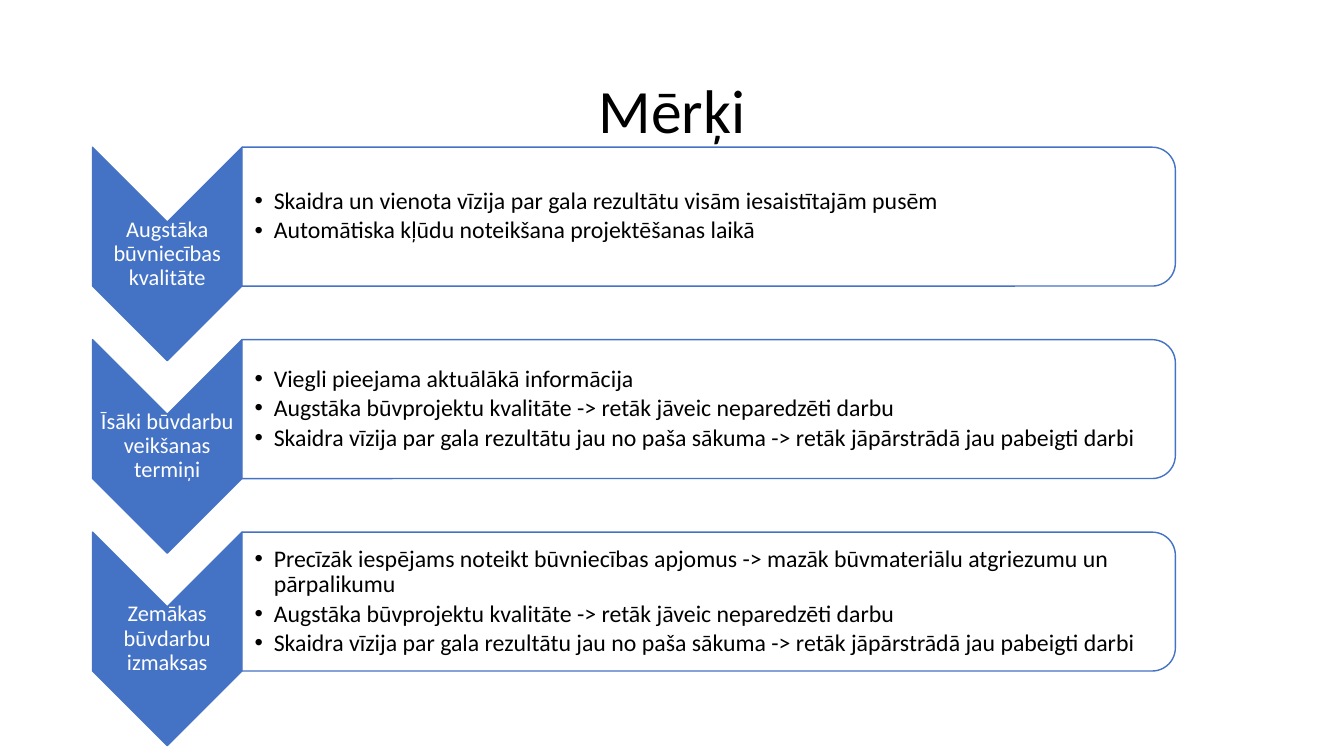
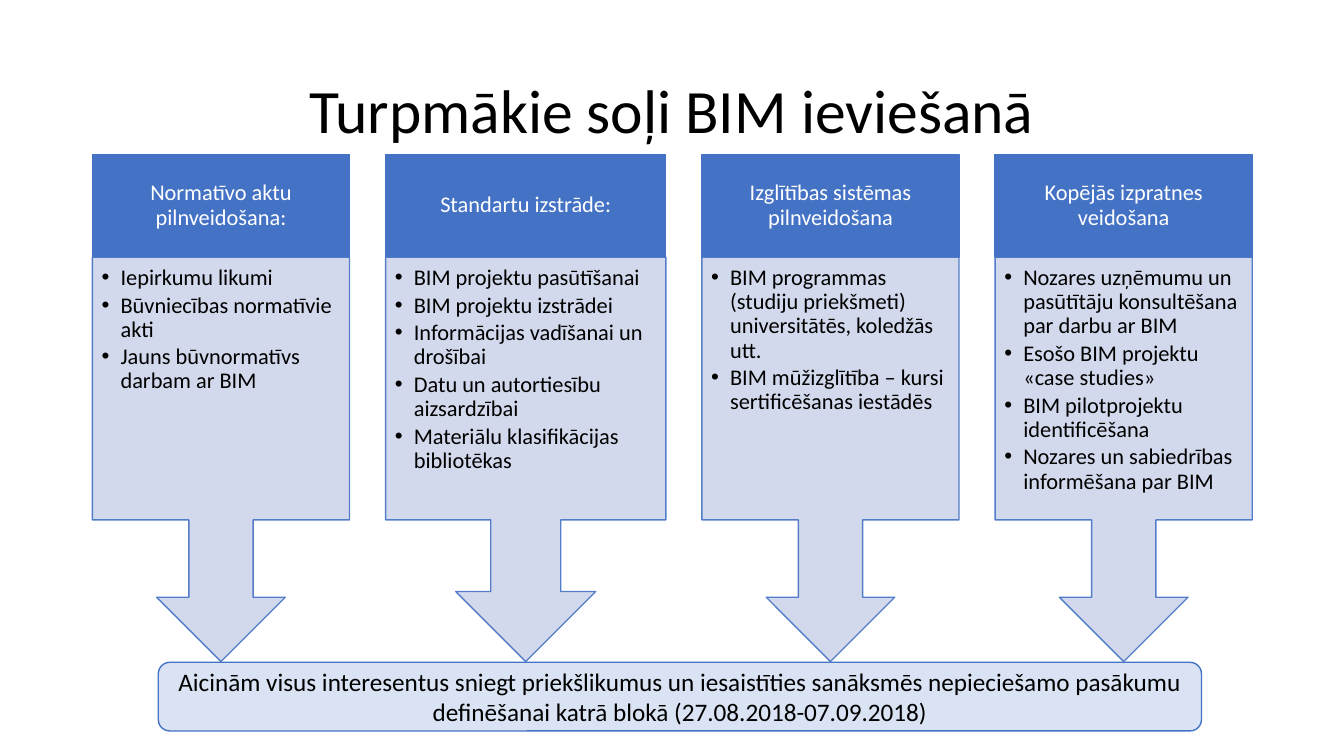
import dataclasses

import lxml.etree
import pptx
import pptx.dml.color
import pptx.enum.shapes
import pptx.enum.text
import pptx.oxml.ns
import pptx.util

Cm = pptx.util.Cm
Pt = pptx.util.Pt
Preset = pptx.enum.shapes.MSO_SHAPE
Align = pptx.enum.text.PP_ALIGN
Anchor = pptx.enum.text.MSO_ANCHOR
qn = pptx.oxml.ns.qn


@dataclasses.dataclass(frozen=True)
class Theme:
    font: str = "Calibri"
    accent: str = "4472C4"
    tint: str = "CFD5EA"
    pale: str = "DAE3F3"
    white: str = "FFFFFF"
    black: str = "000000"
    title_size: int = 44
    note_size: int = 18
    goal_size: int = 17
    label_size: int = 16
    line_width: int = 1
    opacity: int = 90
    bullet_indent: float = 0.48
    tight: float = 0.9
    label_gap: float = 0.35  # space after, as a share of the type size
    list_gap: float = 0.15


THEME = Theme()
FILL = ("a:solidFill", "a:srgbClr")
OUTLINE = ("a:ln", "a:solidFill", "a:srgbClr")

GOALS = [
    ("Augstāka būvniecības kvalitāte",
     ["Skaidra un vienota vīzija par gala rezultātu visām iesaistītajām pusēm",
      "Automātiska kļūdu noteikšana projektēšanas laikā"]),
    ("Īsāki būvdarbu veikšanas termiņi",
     ["Viegli pieejama aktuālākā informācija",
      "Augstāka būvprojektu kvalitāte -> retāk jāveic neparedzēti darbu",
      "Skaidra vīzija par gala rezultātu jau no paša sākuma -> retāk jāpārstrādā jau pabeigti darbi"]),
    ("Zemākas būvdarbu izmaksas",
     ["Precīzāk iespējams noteikt būvniecības apjomus -> mazāk būvmateriālu atgriezumu un pārpalikumu",
      "Augstāka būvprojektu kvalitāte -> retāk jāveic neparedzēti darbu",
      "Skaidra vīzija par gala rezultātu jau no paša sākuma -> retāk jāpārstrādā jau pabeigti darbi"]),
]

# Column width in cm, heading, list
STEPS = [
    (6.48, "Normatīvo aktu pilnveidošana:",
     ["Iepirkumu likumi",
      "Būvniecības normatīvie akti",
      "Jauns būvnormatīvs darbam ar BIM"]),
    (7.06, "Standartu izstrāde:",
     ["BIM projektu pasūtīšanai",
      "BIM projektu izstrādei",
      "Informācijas vadīšanai un drošībai",
      "Datu un autortiesību aizsardzībai",
      "Materiālu klasifikācijas bibliotēkas"]),
    (6.48, "Izglītības sistēmas pilnveidošana",
     ["BIM programmas (studiju priekšmeti) universitātēs, koledžās utt.",
      "BIM mūžizglītība – kursi sertificēšanas iestādēs"]),
    (6.48, "Kopējās izpratnes veidošana",
     ["Nozares uzņēmumu un pasūtītāju konsultēšana par darbu ar BIM",
      "Esošo BIM projektu «case studies»",
      "BIM pilotprojektu identificēšana",
      "Nozares un sabiedrības informēšana par BIM"]),
]

CALL = ("Aicinām visus interesentus sniegt priekšlikumus un iesaistīties sanāksmēs nepieciešamo "
        "pasākumu definēšanai katrā blokā (27.08.2018-07.09.2018)")


def add_bullet(para):
    properties = para._p.get_or_add_pPr()
    indent = Cm(THEME.bullet_indent)
    properties.set("marL", str(int(indent)))
    properties.set("indent", str(-int(indent)))
    lxml.etree.SubElement(properties, qn("a:buFont"), typeface="Arial")
    lxml.etree.SubElement(properties, qn("a:buChar"), char="•")


def write(box, lines, *, size, color=THEME.black, align=Align.CENTER, anchor=Anchor.MIDDLE,
          spacing=THEME.tight, gap=0, bullets=False, insets=None):
    """Fill a box with paragraphs; insets are left, top, right, bottom in cm."""
    frame = box.text_frame
    frame.word_wrap = True
    frame.auto_size = pptx.enum.text.MSO_AUTO_SIZE.NONE
    frame.vertical_anchor = anchor
    if insets:
        (frame.margin_left, frame.margin_top,
         frame.margin_right, frame.margin_bottom) = map(Cm, insets)
    for index, line in enumerate(lines):
        para = frame.add_paragraph() if index else frame.paragraphs[0]
        if bullets:
            add_bullet(para)
        para.alignment = align
        para.line_spacing = spacing
        para.space_before = Pt(0)
        para.space_after = Pt(round(size * gap, 1))
        span = para.add_run()
        span.text = line
        span.font.name = THEME.font
        span.font.size = Pt(size)
        span.font.color.rgb = pptx.dml.color.RGBColor.from_string(color)


def write_list(box, lines, **options):
    write(box, lines, align=Align.LEFT, gap=THEME.list_gap, bullets=True, **options)


def add_text_box(page, left, top, width, height):
    return page.shapes.add_textbox(Cm(left), Cm(top), Cm(width), Cm(height))


def add_box(page, preset, left, top, width, height, *, fill, faded=(), turned=False):
    """Add an outlined shape; a turned one is rotated to fill the given box."""
    if turned:
        left, top = left + (width - height) / 2, top + (height - width) / 2
        width, height = height, width
    box = page.shapes.add_shape(preset, Cm(left), Cm(top), Cm(width), Cm(height))
    box.rotation = 90 if turned else 0
    box.shadow.inherit = False
    box.fill.solid()
    box.fill.fore_color.rgb = pptx.dml.color.RGBColor.from_string(fill)
    box.line.color.rgb = pptx.dml.color.RGBColor.from_string(THEME.accent)
    box.line.width = Pt(THEME.line_width)
    for tags in faded:
        paint = box._element.spPr.find("/".join(map(qn, tags)))
        lxml.etree.SubElement(paint, qn("a:alpha"), val=str(THEME.opacity * 1000))
    return box


def add_page(deck, title):
    page = deck.slides.add_slide(deck.slide_layouts[5])
    box = page.shapes.title
    box.left, box.top, box.width, box.height = map(Cm, (2.33, 1.01, 29.21, 3.68))
    write(box, [title], size=THEME.title_size)
    return page


def add_goal(page, label, lines, left, top):
    """A downward chevron with its label, and a panel with a list beside it."""
    arrow_width, arrow_height = 3.77, 5.38
    panel_left, panel_width, panel_height = left + arrow_width, 23.52, 3.5
    inset, edge = 0.18, 0.03

    # Chevron and label
    add_box(page, Preset.CHEVRON, left, top, arrow_width, arrow_height,
            fill=THEME.accent, turned=True)
    notch = arrow_width / 2
    label_box = add_text_box(page, left, top + notch, arrow_width, arrow_height - 2 * notch)
    write(label_box, [label], size=THEME.label_size, color=THEME.white,
          gap=THEME.label_gap, insets=[edge] * 4)

    # Panel and list
    add_box(page, Preset.ROUND_2_SAME_RECTANGLE, panel_left, top, panel_width, panel_height,
            fill=THEME.white, faded=[FILL], turned=True)
    list_box = add_text_box(page, panel_left, top + inset,
                            panel_width - inset, panel_height - 2 * inset)
    write_list(list_box, lines, size=THEME.goal_size, insets=(0.32, edge, edge, edge))


def add_step(page, heading, lines, left, top, width):
    """A heading block above an arrow callout that holds a list."""
    heading_height, callout_height = 2.59, 10.19
    block = add_box(page, Preset.RECTANGLE, left, top, width, heading_height, fill=THEME.accent)
    write(block, [heading], size=THEME.label_size, color=THEME.white,
          gap=THEME.label_gap, insets=(0.3, 0.18, 0.3, 0.18))
    callout = add_box(page, Preset.DOWN_ARROW_CALLOUT, left, top + heading_height,
                      width, callout_height, fill=THEME.tint, faded=[FILL, OUTLINE])
    write_list(callout, lines, size=THEME.label_size, anchor=Anchor.TOP,
               insets=(0.23, 0.23, 0.3, 0.36))


def build_goals(deck):
    page = add_page(deck, "Mērķi")
    for index, (label, lines) in enumerate(GOALS):
        add_goal(page, label, lines, left=2.33, top=3.71 + index * 4.85)


def build_steps(deck):
    page = add_page(deck, "Turpmākie soļi BIM ieviešanā")
    left, gap = 2.33, 0.91
    for width, heading, lines in STEPS:
        add_step(page, heading, lines, left, 3.89, width)
        left += width + gap

    # Closing call
    bar = add_box(page, Preset.ROUNDED_RECTANGLE, 3.99, 16.69, 26.29, 1.73, fill=THEME.pale)
    write(bar, [CALL], size=THEME.note_size, spacing=1.0)


def main():
    deck = pptx.Presentation()
    deck.slide_width, deck.slide_height = Cm(33.87), Cm(19.05)
    build_goals(deck)
    build_steps(deck)
    deck.save("out.pptx")


if __name__ == "__main__":
    main()
